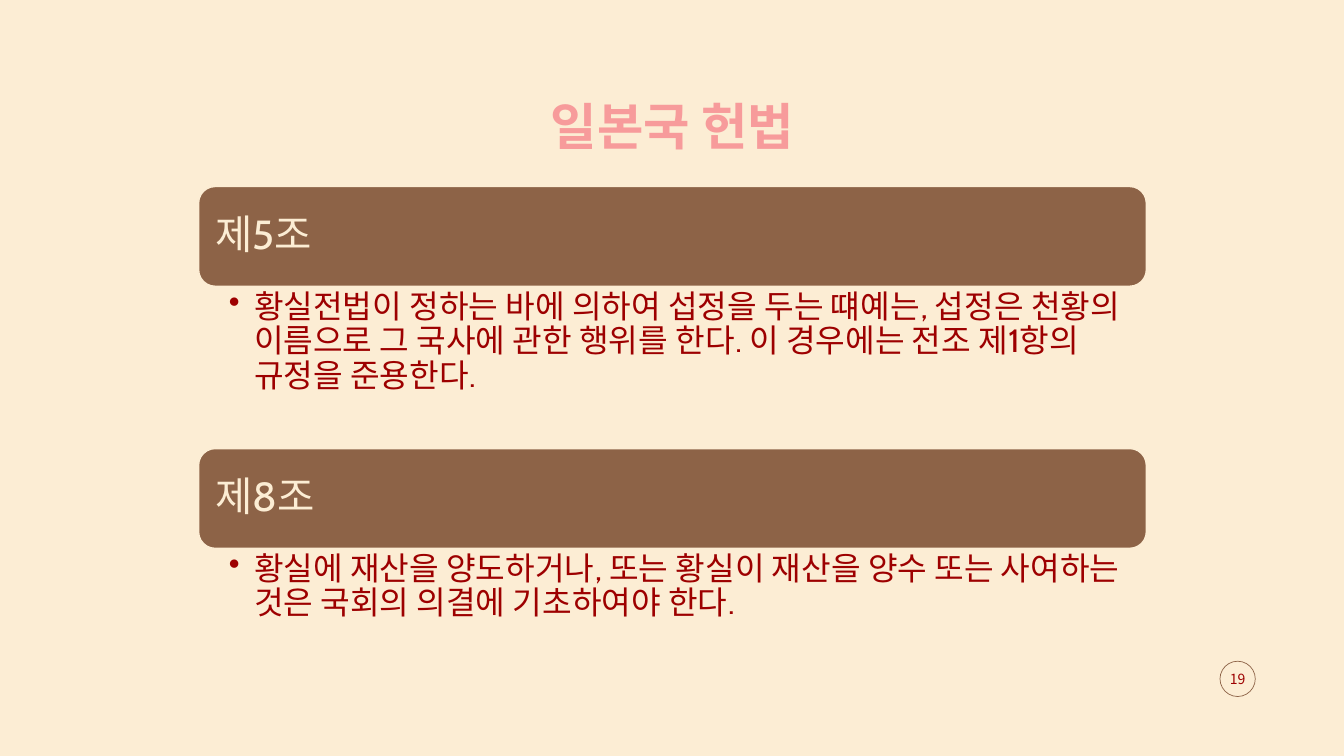
from dataclasses import dataclass

from lxml import etree
from pptx import Presentation
from pptx.dml.color import RGBColor
from pptx.enum.shapes import MSO_SHAPE
from pptx.enum.text import MSO_ANCHOR, PP_ALIGN
from pptx.oxml.ns import qn
from pptx.util import Inches, Pt

TITLE = "일본국 헌법"
PAGE_NUMBER = "19"
ARTICLES = [
    ("제5조", "황실전법이 정하는 바에 의하여 섭정을 두는 떄예는, 섭정은 천황의 이름으로 "
     "그 국사에 관한 행위를 한다. 이 경우에는 전조 제1항의 규정을 준용한다.", 1.61),
    ("제8조", "황실에 재산을 양도하거나, 또는 황실이 재산을 양수 또는 사여하는 것은 "
     "국회의 의결에 기초하여야 한다.", 1.08),
]

LEFT, TOP, WIDTH, HEADING_HEIGHT = 1.97, 1.85, 9.4, 0.99
CENTER, START = PP_ALIGN.CENTER, PP_ALIGN.LEFT
ANCHOR_TOP, ANCHOR_MIDDLE, ANCHOR_BOTTOM = MSO_ANCHOR.TOP, MSO_ANCHOR.MIDDLE, MSO_ANCHOR.BOTTOM
ROUNDED, ELLIPSE = MSO_SHAPE.ROUNDED_RECTANGLE, MSO_SHAPE.OVAL


@dataclass(frozen=True)
class Theme:
    cream: RGBColor = RGBColor.from_string("FCEDD4")
    brown: RGBColor = RGBColor.from_string("8D6347")
    pink: RGBColor = RGBColor.from_string("F79B9B")
    red: RGBColor = RGBColor.from_string("9D0000")
    latin: str = "Cabin"
    korean: str = "Noto Sans CJK KR"
    title_size: float = 36
    heading_size: float = 29
    body_size: float = 23
    number_size: float = 10


THEME = Theme()


def write(shape, text, size, color, font, align=START, anchor=ANCHOR_MIDDLE,
          insets=(0, 0, 0, 0), bold=False, spacing=0.9):
    frame = shape.text_frame
    frame.text = text
    frame.word_wrap = True
    frame.vertical_anchor = anchor
    frame.margin_left, frame.margin_top, frame.margin_right, frame.margin_bottom = map(Inches, insets)
    para = frame.paragraphs[0]
    para.alignment = align
    para.line_spacing = spacing
    span = para.runs[0]
    span.font.name = font
    span.font.size = Pt(size)
    span.font.bold = bold
    span.font.color.rgb = color
    east_asian = etree.SubElement(span.font._element, qn("a:ea"))
    east_asian.set("typeface", THEME.korean)
    return para


def add_bullet(para):
    properties = para._p.get_or_add_pPr()
    properties.set("marL", str(Inches(0.25)))
    properties.set("indent", str(-Inches(0.25)))
    etree.SubElement(properties, qn("a:buChar")).set("char", "•")


def add_outlined(page, kind, bounds, line_color, line_width, fill=None):
    shape = page.shapes.add_shape(kind, *map(Inches, bounds))
    shape.shadow.inherit = False
    if fill is None:
        shape.fill.background()
    else:
        shape.fill.solid()
        shape.fill.fore_color.rgb = fill
    shape.line.color.rgb = line_color
    shape.line.width = Pt(line_width)
    return shape


def add_article(page, top, heading, body, body_height):
    bar = add_outlined(page, ROUNDED, (LEFT, top, WIDTH, HEADING_HEIGHT),
                       THEME.cream, 1, THEME.brown)
    write(bar, heading, THEME.heading_size, THEME.cream, THEME.latin,
          insets=(0.12, 0.12, 0.12, 0.12))
    body_top = top + HEADING_HEIGHT
    box = page.shapes.add_textbox(*map(Inches, (LEFT, body_top, WIDTH, body_height)))
    para = write(box, body, THEME.body_size, THEME.red, THEME.latin,
                 anchor=ANCHOR_TOP, insets=(0.3, 0.04, 0.23, 0.04))
    add_bullet(para)
    return body_top + body_height


def main():
    deck = Presentation()
    deck.slide_width, deck.slide_height = Inches(13.33), Inches(7.5)
    page = deck.slides.add_slide(deck.slide_layouts[5])
    page.background.fill.solid()
    page.background.fill.fore_color.rgb = THEME.cream

    title = page.shapes.title
    title.left, title.top, title.width, title.height = map(Inches, (0.92, 0.83, 11.5, 0.77))
    write(title, TITLE, THEME.title_size, THEME.pink, THEME.korean, CENTER,
          ANCHOR_BOTTOM, (0.1, 0.05, 0.1, 0.05), bold=True)

    top = TOP
    for heading, body, body_height in ARTICLES:
        top = add_article(page, top, heading, body, body_height)

    badge = add_outlined(page, ELLIPSE, (12.1, 6.56, 0.35, 0.35), THEME.brown, 0.5)
    write(badge, PAGE_NUMBER, THEME.number_size, THEME.red, THEME.korean, CENTER, spacing=1.0)
    deck.save("out.pptx")


if __name__ == "__main__":
    main()
